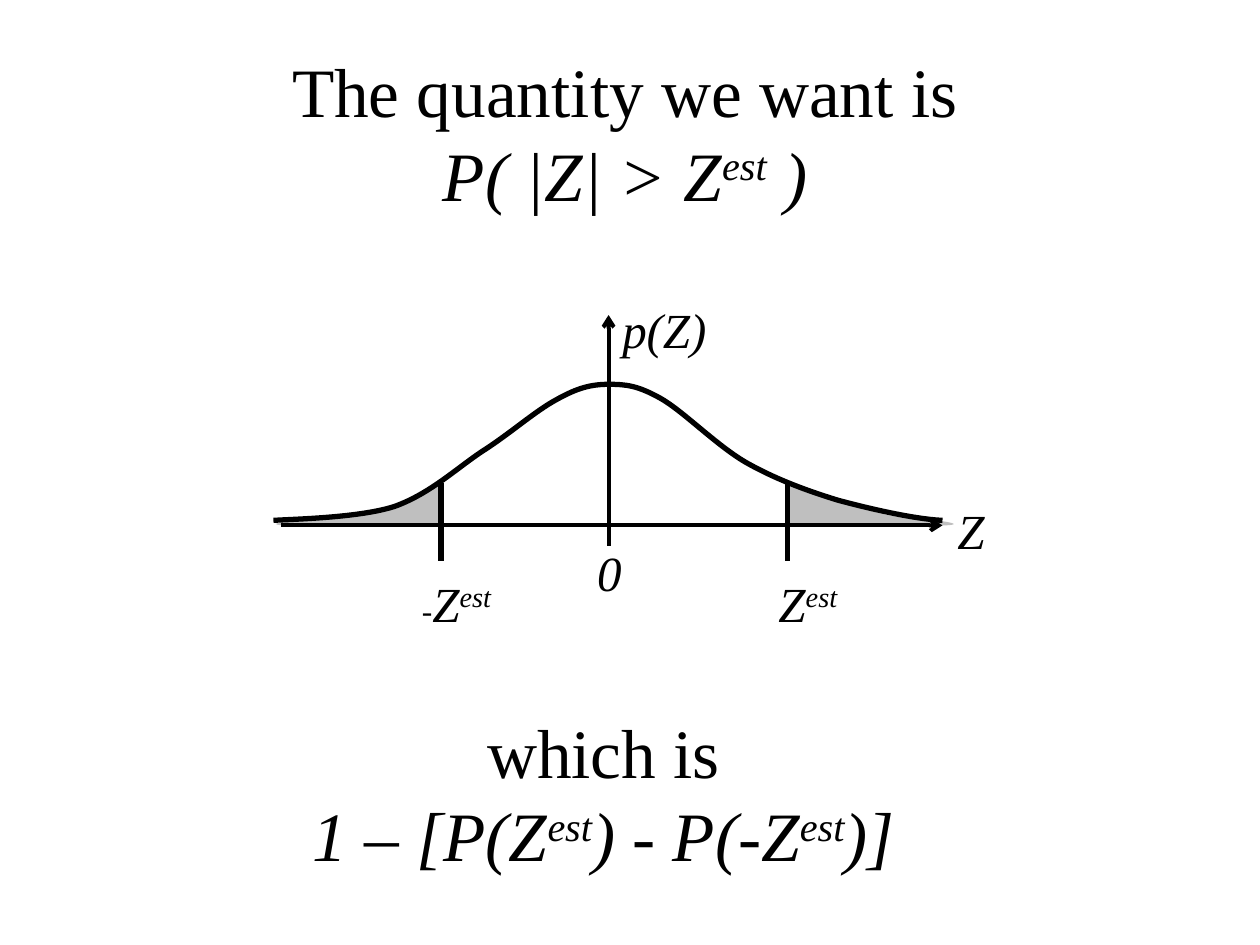
from dataclasses import dataclass

from lxml import etree
from pptx import Presentation
from pptx.dml.color import RGBColor
from pptx.enum.shapes import MSO_CONNECTOR
from pptx.enum.text import MSO_ANCHOR, PP_ALIGN
from pptx.oxml.ns import qn
from pptx.util import Inches, Pt

STRAIGHT = MSO_CONNECTOR.STRAIGHT
LEFT, CENTER = PP_ALIGN.LEFT, PP_ALIGN.CENTER
TOP, MIDDLE = MSO_ANCHOR.TOP, MSO_ANCHOR.MIDDLE


@dataclass(frozen=True)
class Theme:
    font: str = "Times New Roman"
    ink: RGBColor = RGBColor(0, 0, 0)
    tail: RGBColor = RGBColor(0xBF, 0xBF, 0xBF)
    heading: float = 39.6
    label: float = 28
    small: float = 18
    axis: float = 2.25
    curve: float = 3


T = Theme()
prs = Presentation()
prs.slide_width, prs.slide_height = Inches(10), Inches(7.5)
s = prs.slides.add_slide(prs.slide_layouts[6])


def add_text(paragraphs, box, size=T.label, align=LEFT, anchor=TOP):
    """Each paragraph lists (text, format) pairs; text between carets is superscript
    and a trailing newline is a line break."""
    tf = s.shapes.add_textbox(*map(Inches, box)).text_frame
    tf.word_wrap, tf.vertical_anchor = True, anchor
    for i, pieces in enumerate(paragraphs):
        p = tf.paragraphs[0] if i == 0 else tf.add_paragraph()
        p.alignment = align
        for text, style in pieces:
            for j, part in enumerate(text.rstrip("\n").split("^")):
                if not part:
                    continue
                r = p.add_run()
                r.text = part
                r.font.name, r.font.color.rgb = T.font, T.ink
                r.font.size = Pt(style.get("size", size))
                r.font.italic = style.get("italic", True)
                if j % 2:
                    r.font._element.set("baseline", "30000")
            if text.endswith("\n"):
                p.add_line_break()


def add_curve(points, closed):
    """Draws a chain of cubic Bezier curves: a start, then three points for each."""
    fb = s.shapes.build_freeform(*map(Inches, points[0]))
    fb.add_line_segments([tuple(map(Inches, xy)) for xy in points[1:]], close=closed)
    sp = fb.convert_to_shape()
    # Join each three straight steps into one cubic curve
    steps = list(sp._element.iter(qn("a:lnTo")))
    for first, second, third in zip(steps[::3], steps[1::3], steps[2::3]):
        cubic = etree.Element(qn("a:cubicBezTo"))
        first.addprevious(cubic)
        for step in (first, second, third):
            cubic.append(step[0])
            step.getparent().remove(step)
    sp.shadow.inherit = False
    if closed:
        sp.fill.solid()
        sp.fill.fore_color.rgb = T.tail
        sp.line.fill.background()
    else:
        sp.fill.background()
        sp.line.color.rgb, sp.line.width = T.ink, Pt(T.curve)


# Shaded tails and the bell curve
right_tail = [(7.51, 4.17), (7.33, 4.17), (6.58, 4.16), (6.26, 4.17),
              (6.26, 3.86), (6.25, 4.19), (6.27, 3.83),
              (6.45, 3.91), (6.44, 3.9), (6.52, 3.93),
              (6.61, 3.96), (6.71, 3.99), (6.8, 4.02),
              (6.89, 4.05), (6.96, 4.07), (7.05, 4.09),
              (7.15, 4.11), (7.27, 4.11), (7.35, 4.12),
              (7.42, 4.13), (7.69, 4.16), (7.51, 4.17)]
left_tail = [(2.25, 4.17), (2.43, 4.17), (3.18, 4.16), (3.5, 4.17),
             (3.5, 3.86), (3.51, 4.19), (3.49, 3.83),
             (3.32, 3.91), (3.37, 3.92), (3.3, 3.96),
             (3.22, 3.99), (3.14, 4.01), (3.04, 4.04),
             (2.94, 4.06), (2.81, 4.07), (2.71, 4.09),
             (2.6, 4.1), (2.49, 4.11), (2.42, 4.12),
             (2.34, 4.13), (2.07, 4.16), (2.25, 4.17)]
bell = [(2.17, 4.13), (2.33, 4.12), (2.85, 4.11), (3.13, 4.02),
        (3.41, 3.92), (3.62, 3.72), (3.83, 3.58),
        (4.05, 3.44), (4.25, 3.26), (4.42, 3.17),
        (4.58, 3.08), (4.69, 3.05), (4.83, 3.05),
        (4.97, 3.05), (5.06, 3.06), (5.24, 3.16),
        (5.42, 3.26), (5.68, 3.53), (5.92, 3.67),
        (6.15, 3.8), (6.39, 3.89), (6.65, 3.97),
        (6.91, 4.04), (7.26, 4.12), (7.48, 4.13)]
for points, closed in ((right_tail, True), (left_tail, True), (bell, False)):
    add_curve(points, closed)

# Axes with arrowheads, then the two cut-off marks
for ends, width, arrow in (
    ((2.23, 4.17, 7.48, 4.17), T.axis, True),
    ((4.83, 4.33, 4.83, 2.5), T.axis, True),
    ((6.25, 3.83, 6.25, 4.45), T.curve, False),
    ((3.5, 3.83, 3.5, 4.45), T.curve, False),
):
    line = s.shapes.add_connector(STRAIGHT, *map(Inches, ends))
    line.line.color.rgb, line.line.width = T.ink, Pt(width)
    if arrow:
        etree.SubElement(line.line._get_or_add_ln(), qn("a:tailEnd"), type="arrow")
    etree.SubElement(line._element.spPr, qn("a:effectLst"))

# Labels on the plot
for pieces, box in (
    ([("0", {})], (4.64, 4.26, 0.33, 0.57)),
    ([("Z^est^", {})], (6.08, 4.5, 1.08, 0.57)),
    ([("Z", {})], (7.5, 3.92, 0.54, 0.57)),
    ([("p(Z)", {})], (4.84, 2.33, 1.41, 0.57)),
    ([("-", {"size": T.small}), ("Z^est^", {})], (3.25, 4.5, 1.08, 0.57)),
):
    add_text([pieces], box)

# Statements above and below the plot
upright = {"italic": False}
add_text([[("The quantity we want is\n", upright), ("P( |Z| > Z^est^ )", {})]],
         (0.17, 0.42, 9.58, 1.25), size=T.heading, align=CENTER, anchor=MIDDLE)
add_text([[("which is", upright)], [("1 – [P(Z^est^) - P(-Z^est^)]", {})]],
         (0, 5.58, 9.58, 1.42), size=T.heading, align=CENTER, anchor=MIDDLE)

prs.save("out.pptx")
